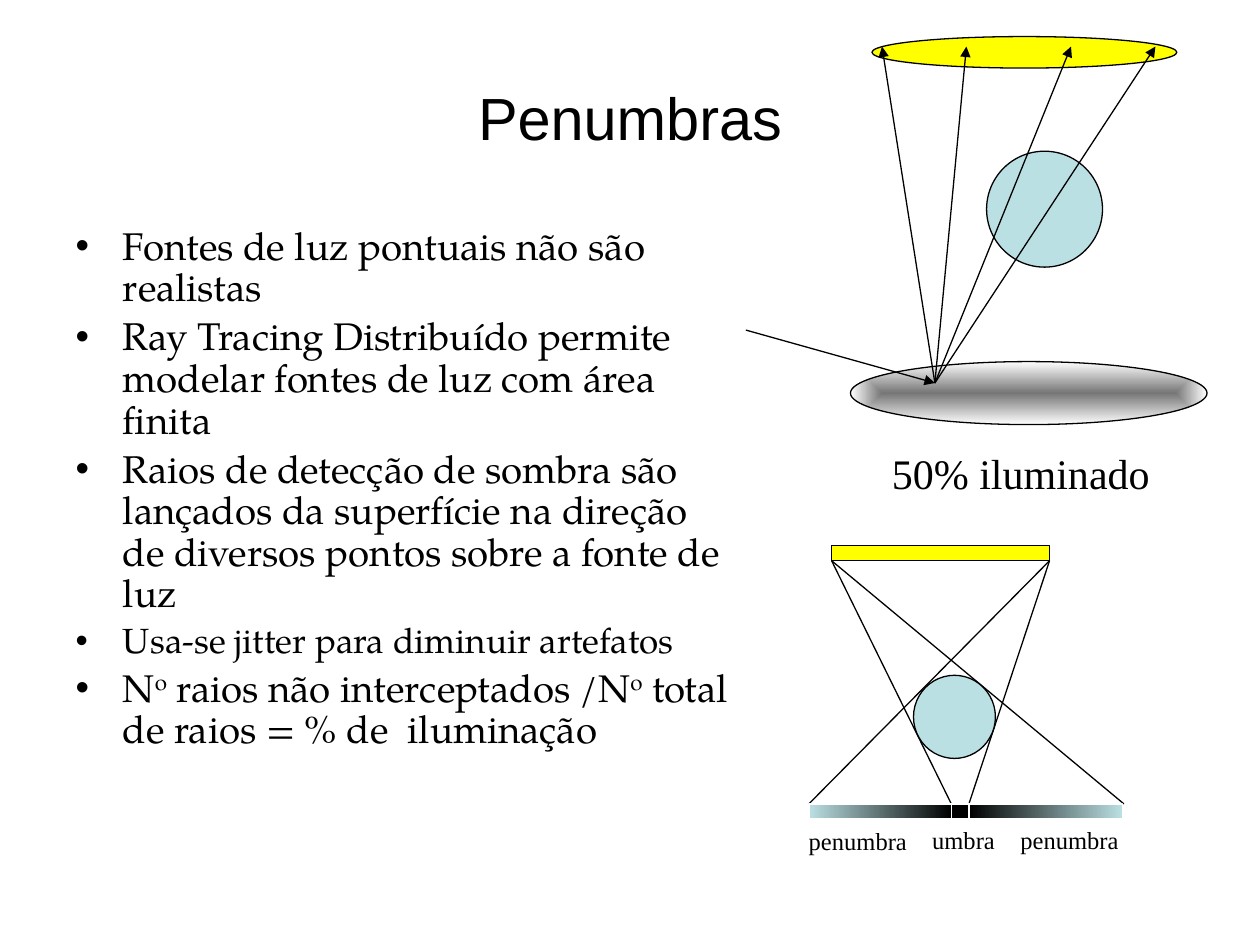
from dataclasses import dataclass
from typing import Any, Optional

from lxml import etree
from pptx import Presentation
from pptx import util as u
from pptx.dml.color import RGBColor
from pptx.enum import shapes, text
from pptx.oxml import ns

BLACK = RGBColor(0x00, 0x00, 0x00)
WHITE = RGBColor(0xFF, 0xFF, 0xFF)
YELLOW = RGBColor(0xFF, 0xFF, 0x00)
BLUE = RGBColor(0xBB, 0xE0, 0xE3)
GRAY = RGBColor(0x76, 0x76, 0x76)

OVAL = shapes.MSO_SHAPE.OVAL
RECT = shapes.MSO_SHAPE.RECTANGLE
SERIF = "Times New Roman"


@dataclass
class Form:
    kind: Any
    box: tuple
    fill: RGBColor
    end: Optional[RGBColor] = None
    edge: RGBColor = BLACK
    radial: bool = False


@dataclass
class Ray:
    start: tuple
    stop: tuple
    arrow: bool = True


@dataclass
class Label:
    words: str
    box: tuple
    size: int


def inches(vals: tuple) -> list:
    return [u.Inches(v) for v in vals]


def style(item: Any, **vals: Any) -> None:
    for key, val in vals.items():
        setattr(item, key, val)


def place(item: Any, box: tuple) -> None:
    style(item, **dict(zip(("left", "top", "width", "height"), inches(box))))


def ink(font: Any, name: str, size: int) -> None:
    style(font, name=name, size=u.Pt(size))
    font.color.rgb = BLACK


def draw_form(tree: Any, form: Form) -> None:
    item = tree.add_shape(form.kind, *inches(form.box))
    item.shadow.inherit = False
    style(item.line, width=u.Pt(0.75))
    item.line.color.rgb = form.edge
    if form.end is None:
        item.fill.solid()
        item.fill.fore_color.rgb = form.fill
        return
    item.fill.gradient()
    item.fill.gradient_angle = 0
    for stop, color in zip(item.fill.gradient_stops, (form.fill, form.end)):
        stop.color.rgb = color
    if form.radial:
        grad = item._element.spPr.find(ns.qn("a:gradFill"))
        grad.remove(grad.find(ns.qn("a:lin")))
        route = etree.SubElement(grad, ns.qn("a:path"), path="shape")
        sides = dict.fromkeys("ltrb", "50000")
        etree.SubElement(route, ns.qn("a:fillToRect"), sides)


def draw_ray(tree: Any, ray: Ray) -> None:
    item = tree.add_connector(
        shapes.MSO_CONNECTOR.STRAIGHT, *inches(ray.start + ray.stop))
    item.line.color.rgb = BLACK
    item.line.width = u.Pt(0.75)
    if ray.arrow:
        line = item.line._get_or_add_ln()
        etree.SubElement(line, ns.qn("a:tailEnd"), type="triangle")
    etree.SubElement(item._element.spPr, ns.qn("a:effectLst"))


def draw_label(tree: Any, label: Label) -> None:
    frame = tree.add_textbox(*inches(label.box)).text_frame
    style(frame, word_wrap=False, text=label.words,
          auto_size=text.MSO_AUTO_SIZE.SHAPE_TO_FIT_TEXT)
    ink(frame.paragraphs[0].runs[0].font, SERIF, label.size)


def draw_all(tree: Any, items: list) -> None:
    tools = {Form: draw_form, Ray: draw_ray, Label: draw_label}
    for item in items:
        tools[type(item)](tree, item)


HIT = (7.42, 3.04)
SCENE = [
    Form(OVAL, (6.92, 0.29, 2.42, 0.25), YELLOW),
    Form(OVAL, (6.75, 2.87, 2.83, 0.5), GRAY, WHITE, radial=True),
    Ray((5.92, 2.62), HIT),
    Form(OVAL, (7.83, 1.2, 0.92, 0.92), BLUE),
    *[Ray(HIT, (x, 0.37)) for x in (7, 9.17, 8.5, 7.67)],
    Label("50% iluminado", (6.98, 3.5, 2.3, 0.5), 24),
]
CONE = [
    *[Ray((a, 4.45), (b, 6.38), False) for a, b in
      ((6.6, 7.55), (6.6, 8.92), (8.33, 6.42), (8.33, 7.69))],
    Form(OVAL, (7.25, 5.36, 0.65, 0.66), BLUE),
    Form(RECT, (6.6, 4.33, 1.73, 0.12), YELLOW),
    Form(RECT, (7.55, 6.38, 0.15, 0.12), BLACK, edge=WHITE),
    Form(RECT, (6.42, 6.38, 1.13, 0.12), BLUE, BLACK, WHITE),
    Form(RECT, (7.69, 6.38, 1.22, 0.12), BLACK, BLUE, WHITE),
]
NAMES = [
    Label("penumbra", (6.32, 6.51, 0.98, 0.33), 14),
    Label("penumbra", (8, 6.5, 0.98, 0.33), 14),
    Label("umbra", (7.3, 6.5, 0.7, 0.33), 14),
]
POINTS = [
    (22, ["Fontes de luz pontuais não são realistas"]),
    (22, ["Ray Tracing Distribuído permite modelar fontes de luz "
          "com área finita"]),
    (22, ["Raios de detecção de sombra são lançados da superfície "
          "na direção de diversos pontos sobre a fonte de luz"]),
    (20, ["Usa-se jitter para diminuir artefatos"]),
    (22, ["N", "o", " raios não interceptados /N", "o",
          " total de raios = % de  iluminação"]),
]


def fill_body(frame: Any) -> None:
    frame.auto_size = text.MSO_AUTO_SIZE.NONE
    for i, (size, parts) in enumerate(POINTS):
        para = frame.add_paragraph() if i else frame.paragraphs[0]
        style(para, line_spacing=0.9)
        if not i:
            para.space_before = u.Pt(0)
        for part in parts:
            run = para.add_run()
            run.text = part
            ink(run.font, "TeX Gyre Pagella", size)
            if part == "o":
                run._r.get_or_add_rPr().set("baseline", "30000")


def main() -> None:
    deck = Presentation()
    style(deck, slide_width=u.Inches(10), slide_height=u.Inches(7.5))
    slide = deck.slides.add_slide(deck.slide_layouts[1])
    title, body = slide.placeholders
    place(title, (0.5, 0.3, 9, 1.25))
    title.text_frame.text = "Penumbras"
    ink(title.text_frame.paragraphs[0].runs[0].font, "Arial", 34)
    place(body, (0.5, 1.75, 5.38, 4.95))
    fill_body(body.text_frame)
    draw_all(slide.shapes, SCENE)
    draw_all(slide.shapes.add_group_shape().shapes, CONE)
    draw_all(slide.shapes, NAMES)
    deck.save("out.pptx")


if __name__ == "__main__":
    main()
